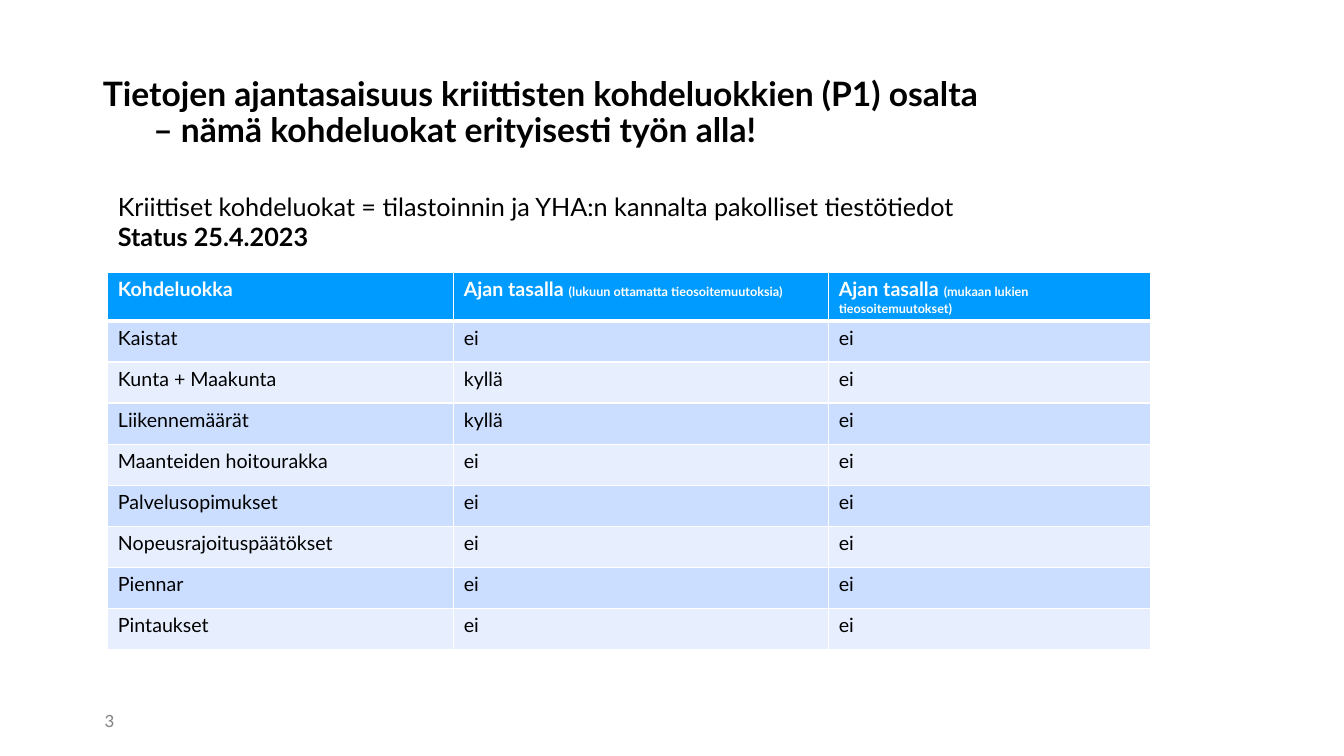
from lxml import etree
from pptx import Presentation
from pptx.dml.color import RGBColor
from pptx.enum.text import MSO_ANCHOR, MSO_AUTO_SIZE, PP_ALIGN
from pptx.oxml.ns import qn
from pptx.util import Inches, Pt

COLORS = {"text": "000000", "white": "FFFFFF", "number": "808080",
          "header": "009BFF", "odd": "CCDEFF", "even": "E7EFFF"}


def style(run, size, color="text", bold=False):
    run.font.name = "Lato"
    run.font.size = Pt(size)
    run.font.bold = bold
    run.font.color.rgb = RGBColor.from_string(COLORS[color])


def add_border(cell, side, width):
    ln = etree.SubElement(cell._tc.get_or_add_tcPr(), qn(f"a:ln{side}"), w=str(Pt(width)))
    fill = etree.SubElement(ln, qn("a:solidFill"))
    etree.SubElement(fill, qn("a:srgbClr"), val=COLORS["white"])


prs = Presentation()
prs.slide_width, prs.slide_height = Inches(13.33), Inches(7.5)
s = prs.slides.add_slide(prs.slide_layouts[5])

# Title
title = s.shapes.title
title.left, title.top = Inches(0.92), Inches(0.4)
title.width, title.height = Inches(10.49), Inches(1.45)
tf = title.text_frame
tf.text = ("Tietojen ajantasaisuus kriittisten kohdeluokkien (P1) osalta\v"
           "\t– nämä kohdeluokat erityisesti työn alla!")
tf.auto_size = MSO_AUTO_SIZE.NONE
tf.vertical_anchor = MSO_ANCHOR.MIDDLE
p = tf.paragraphs[0]
p.alignment = PP_ALIGN.LEFT
p.line_spacing = 0.9
for r in p.runs:
    style(r, 24, bold=True)

# Table
header = [("Kohdeluokka", ""),
          ("Ajan tasalla ", "(lukuun ottamatta tieosoitemuutoksia)"),
          ("Ajan tasalla ", "(mukaan lukien tieosoitemuutokset)")]
classes = [("Kaistat", "ei", "ei"),
           ("Kunta + Maakunta", "kyllä", "ei"),
           ("Liikennemäärät", "kyllä", "ei"),
           ("Maanteiden hoitourakka", "ei", "ei"),
           ("Palvelusopimukset", "ei", "ei"),
           ("Nopeusrajoituspäätökset", "ei", "ei"),
           ("Piennar", "ei", "ei"),
           ("Pintaukset", "ei", "ei")]
col_widths = [3.43, 3.72, 3.19]
table_height, header_height = 3.73, 0.47
row_height = (table_height - header_height) / len(classes)

table = s.shapes.add_table(len(classes) + 1, len(col_widths), Inches(1.07), Inches(2.7),
                           Inches(sum(col_widths)), Inches(table_height)).table
for column, width in zip(table.columns, col_widths):
    column.width = Inches(width)

for i, row in enumerate([header] + classes):
    table.rows[i].height = Inches(row_height if i else header_height)
    for j, content in enumerate(row):
        cell = table.cell(i, j)
        p = cell.text_frame.paragraphs[0]
        if i == 0:
            label, note = content
            fill = "header"
            p.text = label
            style(p.runs[0], 14, "white", True)
            if note:
                r = p.add_run()
                r.text = note
                style(r, 9, "white", True)
        else:
            fill = "odd" if i % 2 else "even"
            p.text = content
            style(p.runs[0], 14)
        for side in "LRTB":
            below_header = (i, side) in [(0, "B"), (1, "T")]
            add_border(cell, side, 3 if below_header else 1)
        cell.fill.solid()
        cell.fill.fore_color.rgb = RGBColor.from_string(COLORS[fill])

# Introduction above the table
tf = s.shapes.add_textbox(Inches(1.07), Inches(1.85), Inches(11.19), Inches(0.71)).text_frame
tf.word_wrap = True
tf.text = ("Kriittiset kohdeluokat = tilastoinnin ja YHA:n kannalta pakolliset tiestötiedot\n"
           "Status 25.4.2023")
for p, bold in zip(tf.paragraphs, [False, True]):
    style(p.runs[0], 18, bold=bold)

# Page number
tf = s.shapes.add_textbox(Inches(0.94), Inches(6.95), Inches(0.61), Inches(0.4)).text_frame
tf.word_wrap = True
tf.vertical_anchor = MSO_ANCHOR.MIDDLE
tf.text = "3"
style(tf.paragraphs[0].runs[0], 12, "number")

prs.save("out.pptx")
